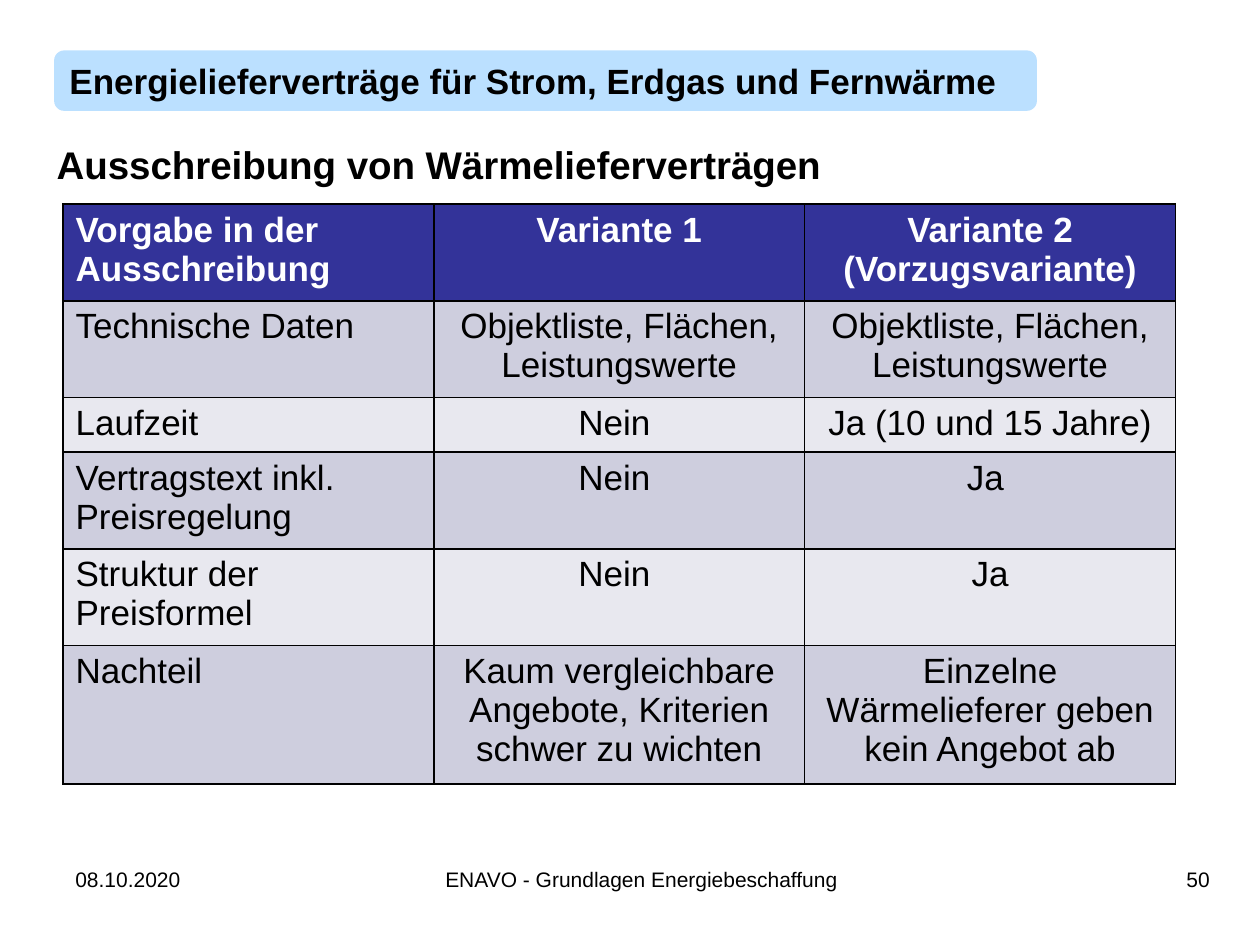
import lxml.etree
import pptx
import pptx.dml.color
import pptx.enum.shapes
import pptx.enum.text
import pptx.oxml.ns
import pptx.util

Inches = pptx.util.Inches
ALIGN = pptx.enum.text.PP_ALIGN
ANCHOR = pptx.enum.text.MSO_ANCHOR
WIDTH, HEIGHT = 10, 7.5
FONT = "Arial"
COLORS = {
    "text": "000000",
    "band": "058EFF",
    "header": "333399",
    "header_text": "FFFFFF",
    "odd_row": "CECEDE",
    "even_row": "E8E8EF",
    "border": "000000",
}
ROWS = [
    ("Vorgabe in der Ausschreibung", "Variante 1", "Variante 2\n(Vorzugsvariante)"),
    ("Technische Daten",) + ("Objektliste, Flächen, Leistungswerte",) * 2,
    ("Laufzeit", "Nein ", "Ja (10 und 15 Jahre)"),
    ("Vertragstext inkl. Preisregelung", "Nein ", "Ja "),
    ("Struktur der Preisformel", "Nein ", "Ja"),
    (
        "Nachteil",
        "Kaum vergleichbare Angebote, Kriterien schwer zu wichten",
        "Einzelne Wärmelieferer geben kein Angebot ab",
    ),
]
LINES_PER_ROW = [2, 2, 1, 2, 2, 3]


def rgb(name):
    return pptx.dml.color.RGBColor.from_string(COLORS[name])


def xml_element(parent, tag, **attributes):
    return lxml.etree.SubElement(parent, pptx.oxml.ns.qn(tag), **attributes)


def write(text_frame, text, size, color="text", bold=False, align=ALIGN.LEFT):
    text_frame.text = text
    text_frame.word_wrap = True
    for paragraph in text_frame.paragraphs:
        paragraph.alignment = align
        for run in paragraph.runs:
            run.font.name = FONT
            run.font.size = pptx.util.Pt(size)
            run.font.bold = bold
            run.font.color.rgb = rgb(color)


def add_band(slide, text):
    band = slide.shapes.add_shape(
        pptx.enum.shapes.MSO_SHAPE.ROUNDED_RECTANGLE,
        Inches(0.43), Inches(0.4), Inches(0.78 * WIDTH), Inches(0.48),
    )
    band.shadow.inherit = False
    band.fill.solid()
    band.fill.fore_color.rgb = rgb("band")
    color = band.fill._xPr.find(".//" + pptx.oxml.ns.qn("a:srgbClr"))
    xml_element(color, "a:alpha", val="27000")
    band.line.fill.background()
    write(band.text_frame, text, 20, bold=True)
    band.text_frame.vertical_anchor = ANCHOR.MIDDLE


def set_title(slide, text):
    title = slide.shapes.title
    title.left, title.top = Inches(0.35), Inches(1.07)
    title.width, title.height = Inches(9.34), Inches(0.48)
    write(title.text_frame, text, 22, bold=True)
    title.text_frame.vertical_anchor = ANCHOR.TOP


def add_footer(slide, text, left, width, align):
    box = slide.shapes.add_textbox(
        Inches(left), Inches(0.91 * HEIGHT), Inches(width), Inches(0.52)
    )
    write(box.text_frame, text, 12, align=align)


def add_borders(cell):
    properties = cell._tc.get_or_add_tcPr()
    for side in ("a:lnL", "a:lnR", "a:lnT", "a:lnB"):
        line = xml_element(properties, side, w=str(pptx.util.Pt(1)))
        fill = xml_element(line, "a:solidFill")
        xml_element(fill, "a:srgbClr", val=COLORS["border"])


def format_cell(cell, text, row, column):
    is_header = row == 0
    fill = "header" if is_header else "odd_row" if row % 2 else "even_row"
    write(
        cell.text_frame, text, 20,
        color="header_text" if is_header else "text",
        bold=is_header,
        align=ALIGN.CENTER if column else ALIGN.LEFT,
    )
    add_borders(cell)
    cell.fill.solid()
    cell.fill.fore_color.rgb = rgb(fill)


def add_comparison_table(slide):
    heights = [0.1 + 0.33 * lines for lines in LINES_PER_ROW]
    width = 8.83
    table = slide.shapes.add_table(
        len(ROWS), len(ROWS[0]),
        Inches(0.5), Inches(1.62), Inches(width), Inches(sum(heights)),
    ).table
    for column in table.columns:
        column.width = Inches(width / len(ROWS[0]))
    for row, texts in enumerate(ROWS):
        table.rows[row].height = Inches(heights[row])
        for column, text in enumerate(texts):
            format_cell(table.cell(row, column), text, row, column)


def main():
    presentation = pptx.Presentation()
    presentation.slide_width = Inches(WIDTH)
    presentation.slide_height = Inches(HEIGHT)
    slide = presentation.slides.add_slide(presentation.slide_layouts[5])
    add_band(slide, "Energielieferverträge für Strom, Erdgas und Fernwärme")
    add_footer(slide, "ENAVO - Grundlagen Energiebeschaffung ", 1.77, 6.69, ALIGN.CENTER)
    add_footer(slide, "08.10.2020", 0.5, 1.2, ALIGN.LEFT)
    add_footer(slide, "50", 8.86, 0.84, ALIGN.RIGHT)
    set_title(slide, "Ausschreibung von Wärmelieferverträgen")
    add_comparison_table(slide)
    presentation.save("out.pptx")


if __name__ == "__main__":
    main()
